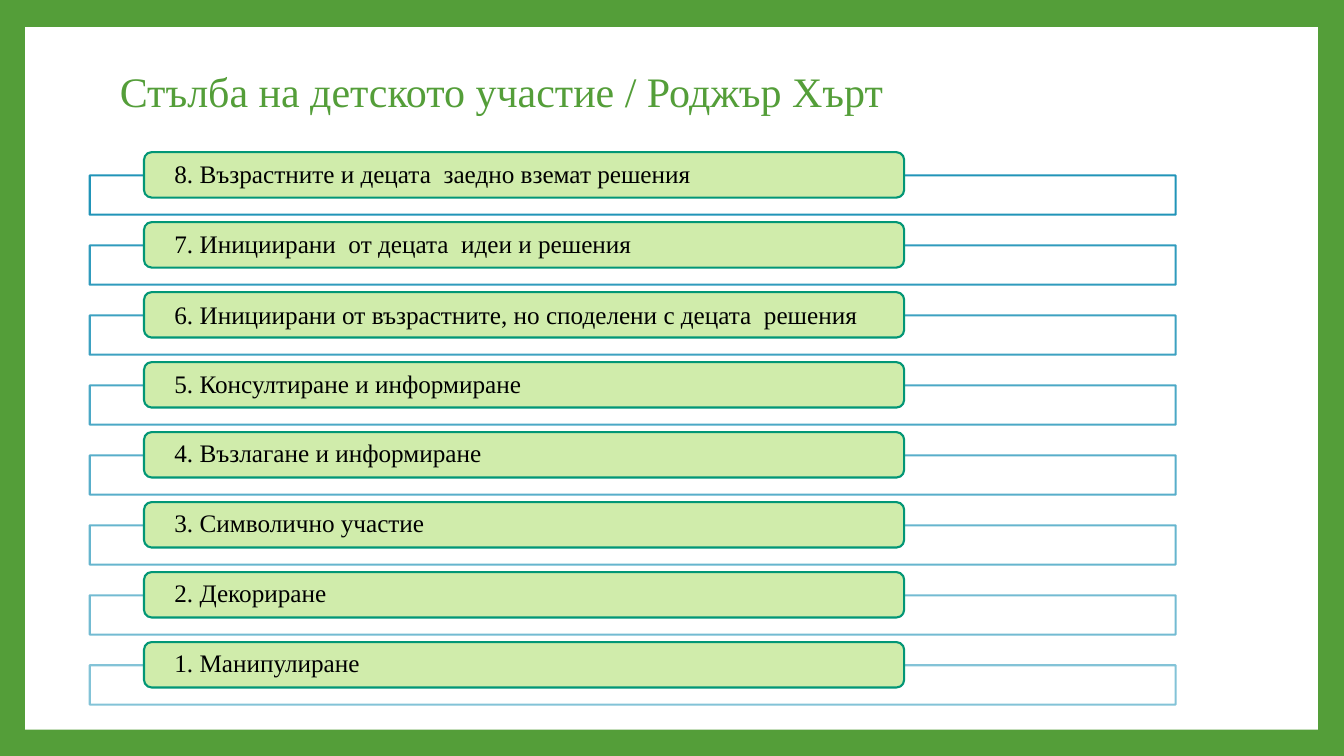
from lxml.etree import SubElement as Sub
from pptx import Presentation
from pptx.dml.color import RGBColor as Rgb
from pptx.enum.shapes import MSO_SHAPE as Form
from pptx.enum.text import MSO_ANCHOR as Anchor, PP_ALIGN as Align
from pptx.oxml.ns import qn
from pptx.util import Inches, Pt

HUES = {
    "green": "549E39",
    "white": "FFFFFF",
    "lime": "D0ECAB",
    "teal": "029676",
    "blue": "0989B1",
    "black": "000000",
}
TITLE = "Стълба на детското участие / Роджър Хърт"
STEPS = [
    "8. Възрастните и децата  заедно вземат решения",
    "7. Инициирани  от децата  идеи и решения",
    "6. Инициирани от възрастните, но споделени с децата  решения",
    "5. Консултиране и информиране",
    "4. Възлагане и информиране",
    "3. Символично участие",
    "2. Декориране",
    "1. Манипулиране",
]
LOOSE = 2


def hue(name):
    return Rgb.from_string(HUES[name])


def fade(fill, share):
    color = fill._xPr.find(".//" + qn("a:srgbClr"))
    Sub(color, qn("a:alpha"), val=str(round(share * 1000)))


def add_form(slide, kind, box, fill, line=None):
    shape = slide.shapes.add_shape(kind, *map(Inches, box))
    shape.shadow.inherit = False
    shape.fill.solid()
    shape.fill.fore_color.rgb = hue(fill)
    if line:
        shape.line.color.rgb = hue(line)
        shape.line.width = Pt(1.5)
    else:
        shape.line.fill.background()
    return shape


def set_text(shape, text, size, color, pad, space=0.9):
    frame = shape.text_frame
    side, edge = map(Inches, pad)
    looks = {
        "word_wrap": True,
        "vertical_anchor": Anchor.MIDDLE,
        "margin_left": side,
        "margin_right": side,
        "margin_top": edge,
        "margin_bottom": edge,
    }
    for key, value in looks.items():
        setattr(frame, key, value)
    line = frame.paragraphs[0]
    line.alignment = Align.LEFT
    line.line_spacing = space
    run = line.add_run()
    run.text = text
    for key, value in {"name": "Times New Roman", "size": Pt(size)}.items():
        setattr(run.font, key, value)
    run.font.color.rgb = hue(color)


def add_frame(slide, box):
    back = slide.background.fill
    back.solid()
    back.fore_color.rgb = hue("green")
    add_form(slide, Form.RECTANGLE, box, "white")


def add_title(slide, box):
    title = slide.shapes.add_textbox(*map(Inches, box))
    set_text(title, TITLE, 30, "green", (0.1, 0.05))


def add_step(slide, box, text, share, space):
    left, top, width, high = box
    bar = add_form(slide, Form.RECTANGLE, (left, top + 0.23, width, high - 0.23),
                   "white", "blue")
    fade(bar.fill, 90)
    fade(bar.line.fill, share)
    pill = add_form(slide, Form.ROUNDED_RECTANGLE,
                    (left + width * 0.05, top, width * 0.7, 0.45), "lime", "teal")
    set_text(pill, text, 18, "black", (0.28, 0), space)


def add_ladder(slide, box):
    left, top, width, height = box
    high = 0.62
    last = len(STEPS) - 1
    pitch = (height - high) / last
    for row, text in enumerate(STEPS):
        add_step(slide, (left, top + row * pitch, width, high), text,
                 90 - 40 * row / last, 1.0 if row == LOOSE else 0.9)


def main():
    deck = Presentation()
    deck.slide_width, deck.slide_height = Inches(13.33), Inches(7.5)
    slide = deck.slides.add_slide(deck.slide_layouts[6])
    add_frame(slide, (0.25, 0.27, 12.82, 6.97))
    add_title(slide, (1.09, 0.58, 10.8, 0.71))
    add_ladder(slide, (0.89, 1.51, 10.77, 5.48))
    deck.save("out.pptx")


if __name__ == "__main__":
    main()
